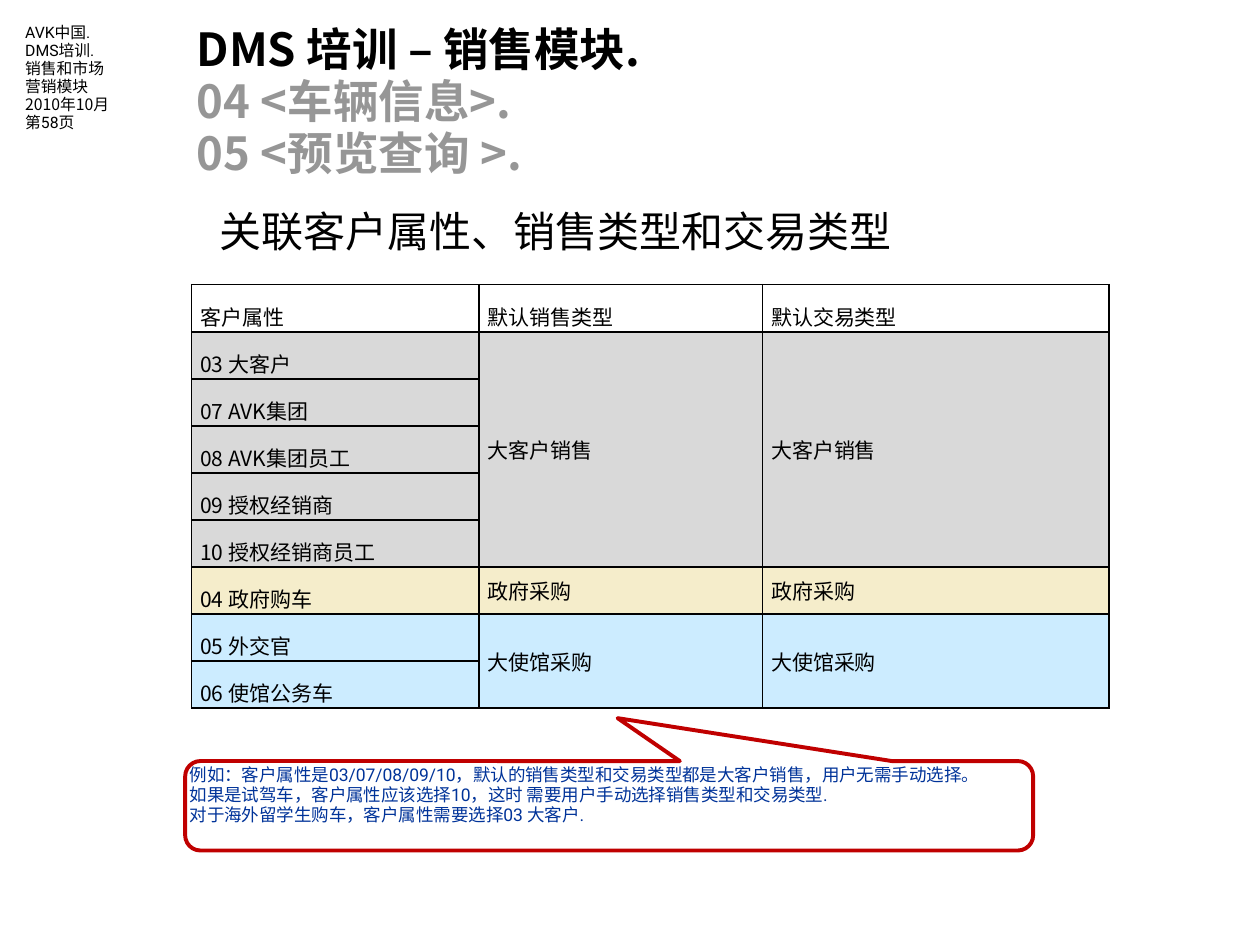
import pptx
import pptx.util
import pptx.dml.color
import pptx.enum.shapes
import pptx.enum.text
import pptx.oxml
import pptx.oxml.ns

Inches, Pt = pptx.util.Inches, pptx.util.Pt
RGBColor = pptx.dml.color.RGBColor
MSO_ANCHOR = pptx.enum.text.MSO_ANCHOR
MSO_AUTO_SIZE = pptx.enum.text.MSO_AUTO_SIZE

BLACK = RGBColor(0x00, 0x00, 0x00)
WHITE = RGBColor(0xFF, 0xFF, 0xFF)
TITLE_GREY = RGBColor(0x96, 0x96, 0x96)
CELL_GREY = RGBColor(0xD9, 0xD9, 0xD9)
CELL_CREAM = RGBColor(0xF5, 0xED, 0xCB)
CELL_BLUE = RGBColor(0xCC, 0xEC, 0xFF)
RED = RGBColor(0xC0, 0x00, 0x00)
NOTE_BLUE = RGBColor(0x00, 0x33, 0x99)
CJK, LATIN = "Noto Sans CJK SC", "Roboto"


def add_run(p, text, size, font=CJK, color=BLACK, bold=False):
    r = p.add_run()
    r.text = text
    r.font.size = Pt(size)
    r.font.name = font
    r.font.bold = bold
    r.font.color.rgb = color
    ea = pptx.oxml.parse_xml(
        f'<a:ea {pptx.oxml.ns.nsdecls("a")} typeface="{CJK}"/>')
    r.font._element.find(pptx.oxml.ns.qn("a:latin")).addnext(ea)


def set_frame(tf, side=0, edge=0, wrap=True, anchor=MSO_ANCHOR.TOP):
    tf.margin_left = tf.margin_right = Inches(side)
    tf.margin_top = tf.margin_bottom = Inches(edge)
    tf.word_wrap = wrap
    tf.vertical_anchor = anchor
    tf.auto_size = MSO_AUTO_SIZE.NONE


def add_lines(tf, lines, size, color=BLACK):
    for i, (text, font) in enumerate(lines):
        p = tf.paragraphs[0] if i == 0 else tf.add_paragraph()
        p.alignment = pptx.enum.text.PP_ALIGN.LEFT
        p.line_spacing = 0.95
        add_run(p, text, size, font, color)


def add_text(s, box, lines, size, wrap=True):
    tf = s.shapes.add_textbox(*map(Inches, box)).text_frame
    set_frame(tf, wrap=wrap)
    add_lines(tf, lines, size)


def fill_title(s, box):
    sp = s.shapes.title
    sp.left, sp.top, sp.width, sp.height = map(Inches, box)
    tf = sp.text_frame
    set_frame(tf, 0.1, 0.05)
    p = tf.paragraphs[0]
    p.alignment = pptx.enum.text.PP_ALIGN.LEFT
    p.line_spacing = 0.95
    add_run(p, "DMS 培训 ", 26, bold=True)
    add_run(p, "– ", 26, LATIN, bold=True)
    add_run(p, "销售模块. ", 26, bold=True)
    for text in ("04 <车辆信息>. ", "05 <预览查询 >."):
        p.add_line_break()
        add_run(p, text, 26, color=TITLE_GREY, bold=True)


def set_borders(cell):
    tc_pr = cell._tc.get_or_add_tcPr()
    for side in ("lnL", "lnR", "lnT", "lnB"):
        tc_pr.append(pptx.oxml.parse_xml(
            f'<a:{side} {pptx.oxml.ns.nsdecls("a")} w="{Pt(1)}"><a:solidFill>'
            f'<a:srgbClr val="{BLACK}"/></a:solidFill></a:{side}>'))


def fill_cell(cell, text, anchor):
    cell.vertical_anchor = anchor
    add_run(cell.text_frame.paragraphs[0], text, 12)


def add_type_table(s, box, col_widths, headers, groups):
    """Each group is (fill, customer attributes, default type)."""
    n_rows = 1 + sum(len(names) for _, names, _ in groups)
    table = s.shapes.add_table(n_rows, len(headers), *map(Inches, box)).table
    table.first_row = table.horz_banding = False
    for col, width in zip(table.columns, col_widths):
        col.width = Inches(width)
    for row in table.rows:
        row.height = Inches(box[3] / n_rows)
    for cell in table.iter_cells():
        cell.margin_left = cell.margin_right = Inches(0.07)
        cell.margin_top = cell.margin_bottom = 0
        set_borders(cell)

    for c, text in enumerate(headers):
        table.cell(0, c).fill.background()
        fill_cell(table.cell(0, c), text, MSO_ANCHOR.BOTTOM)

    top = 1
    for color, names, default in groups:
        last = top + len(names) - 1
        for row, name in enumerate(names, top):
            for c in range(len(headers)):
                table.cell(row, c).fill.solid()
                table.cell(row, c).fill.fore_color.rgb = color
            fill_cell(table.cell(row, 0), name, MSO_ANCHOR.BOTTOM)
        for c in range(1, len(headers)):
            if last > top:
                table.cell(top, c).merge(table.cell(last, c))
            fill_cell(table.cell(top, c), default, MSO_ANCHOR.MIDDLE)
        top = last + 1


def add_callout(s, box, lines):
    sp = s.shapes.add_shape(
        pptx.enum.shapes.MSO_SHAPE.ROUNDED_RECTANGULAR_CALLOUT,
        *map(Inches, box))
    for i, value in enumerate((0.01, -0.98, 0.17)):
        sp.adjustments[i] = value
    sp.shadow.inherit = False
    sp.fill.solid()
    sp.fill.fore_color.rgb = WHITE
    sp.line.color.rgb = RED
    sp.line.width = Pt(2.25)
    set_frame(sp.text_frame)
    add_lines(sp.text_frame, lines, 10, NOTE_BLUE)


def main():
    prs = pptx.Presentation()
    prs.slide_width, prs.slide_height = Inches(10), Inches(7.5)
    s = prs.slides.add_slide(prs.slide_layouts[5])

    # Course details and title
    add_text(s, (0.2, 0.19, 0.98, 0.81), [
        ("AVK中国.", LATIN), ("DMS培训.", LATIN), ("销售和市场", CJK),
        ("营销模块", CJK), ("2010年10月", CJK), ("第58页", LATIN)], 9)
    fill_title(s, (1.46, 0.15, 8.37, 1.2))

    # Subtitle
    add_text(s, (1.74, 1.66, 5.39, 0.38),
             [("关联客户属性、销售类型和交易类型", LATIN)], 24, wrap=False)

    # Customer attributes and their default types
    add_type_table(
        s, (1.52, 2.26, 7.28, 3.36), (2.28, 2.25, 2.75),
        ("客户属性", "默认销售类型", "默认交易类型"), [
            (CELL_GREY, ("03 大客户", "07 AVK集团", "08 AVK集团员工",
                         "09 授权经销商", "10 授权经销商员工"), "大客户销售"),
            (CELL_CREAM, ("04 政府购车",), "政府采购"),
            (CELL_BLUE, ("05 外交官", "06 使馆公务车"), "大使馆采购")])

    # Example note pointing at the table
    add_callout(s, (1.47, 6.04, 6.73, 0.71), [
        ("例如：客户属性是03/07/08/09/10，默认的销售类型和交易类型都是大客户销售，"
         "用户无需手动选择。", LATIN),
        ("如果是试驾车，客户属性应该选择10，这时 需要用户手动选择销售类型和交易类型.",
         LATIN),
        ("对于海外留学生购车，客户属性需要选择03 大客户.", LATIN)])

    prs.save("out.pptx")


if __name__ == "__main__":
    main()
